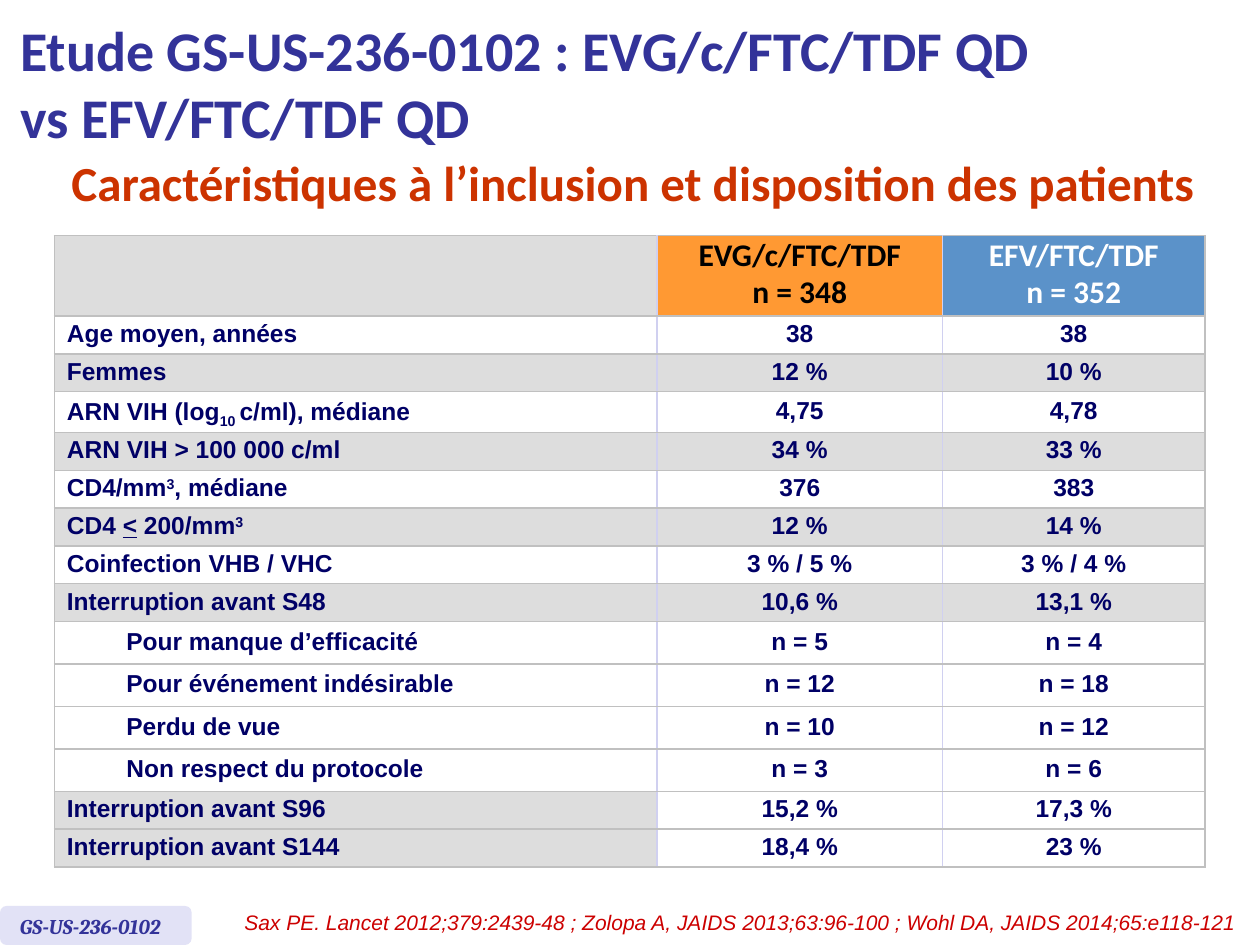
import pptx
import pptx.util
import pptx.dml.color
import pptx.enum.shapes
import pptx.enum.text
import pptx.oxml.ns
import lxml.etree

Pt = pptx.util.Pt
ALIGN = pptx.enum.text.PP_ALIGN
ANCHOR = pptx.enum.text.MSO_ANCHOR
FIT = pptx.enum.text.MSO_AUTO_SIZE
SHAPE = pptx.enum.shapes.MSO_SHAPE

NAVY, BLUE, WHITE, GREY = "000066", "333399", "FFFFFF", "DDDDDD"
LINE, LILAC = "C0C0C0", "D0D0F0"
EDGES = [LINE, None, LILAC, LILAC, LINE]  # vertical rules, left to right
COLS = [34, 310.4, 163.2, 150]
HEAD = [("EVG/c/FTC/TDF\nn = 348", "000000", "FF9933"),
        ("EFV/FTC/TDF\nn = 352", WHITE, "5B92C9")]
SUP, SUB = {"base": 30}, {"base": -25}

# Label, the two values, fill of the label, fill of the values, indented
ROWS = [
    ("Age moyen, années", "38", "38", WHITE, WHITE, False),
    ("Femmes", "12 %", "10 %", GREY, GREY, False),
    (["ARN VIH (log", ("10 ", SUB), "c/ml), médiane"],
     "4,75", "4,78", WHITE, WHITE, False),
    ("ARN VIH > 100 000 c/ml", "34 %", "33 %", GREY, GREY, False),
    (["CD4/mm", ("3", SUP), ", médiane"], "376", "383", WHITE, WHITE, False),
    (["CD4 ", ("<", {"under": True}), " 200/mm", ("3", SUP)],
     "12 %", "14 %", GREY, GREY, False),
    ("Coinfection VHB / VHC", "3 % / 5 %", "3 % / 4 %", WHITE, WHITE, False),
    ("Interruption avant S48", "10,6 %", "13,1 %", GREY, GREY, False),
    ("Pour manque d’efficacité", "n = 5", "n = 4", WHITE, WHITE, True),
    ("Pour événement indésirable", "n = 12", "n = 18", WHITE, WHITE, True),
    ("Perdu de vue", "n = 10", "n = 12", WHITE, WHITE, True),
    ("Non respect du protocole", "n = 3", "n = 6", WHITE, WHITE, True),
    ("Interruption avant S96", "15,2 %", "17,3 %", GREY, WHITE, False),
    ("Interruption avant S144", "18,4 %", "23 %", GREY, WHITE, False),
]


def tint(code):
    return pptx.dml.color.RGBColor.from_string(code)


def node(top, tag, **attrs):
    return lxml.etree.SubElement(top, pptx.oxml.ns.qn(tag), **attrs)


def add_run(para, text, size, face, color, bold, slant, base=0, under=False):
    run = para.add_run()
    run.text = text
    font = run.font
    font.size, font.name = Pt(size), face
    font.bold, font.italic = bold, slant
    font.color.rgb = tint(color)
    if under:
        font.underline = True
    if base:
        run._r.get_or_add_rPr().set("baseline", str(base * 1000))


def write(frame, text, size=14, face="Arial", color=NAVY, bold=False,
          slant=False, align=ALIGN.LEFT, space=None, gap=0):
    """Fill a frame; text is lines in a string, or a list of run parts."""
    lines = [[line] for line in text.split("\n")] if isinstance(text, str) else [text]
    for i, parts in enumerate(lines):
        para = frame.add_paragraph() if i else frame.paragraphs[0]
        para.alignment = align
        if space:
            para.line_spacing = space
        if i and gap:
            para.space_before = Pt(gap)
        for part in parts:
            words, extra = (part, {}) if isinstance(part, str) else part
            add_run(para, words, size, face, color, bold, slant, **extra)


def text_box(shapes, left, top, width, height, text, **form):
    box = shapes.add_textbox(Pt(left), Pt(top), Pt(width), Pt(height))
    box.text_frame.word_wrap = True
    box.text_frame.auto_size = FIT.SHAPE_TO_FIT_TEXT
    write(box.text_frame, text, **form)


def dress(cell, fill, left, right):
    """Set the borders, then the fill, of one cell."""
    props = cell._tc.get_or_add_tcPr()
    for side, color in zip("LRTB", (left, right, LINE, LINE)):
        edge = node(props, f"a:ln{side}", w=str(Pt(1)))
        if color:
            node(node(edge, "a:solidFill"), "a:srgbClr", val=color)
        else:
            node(edge, "a:noFill")
    cell.fill.solid()
    cell.fill.fore_color.rgb = tint(fill)
    cell.vertical_anchor = ANCHOR.MIDDLE


def add_grid(slide):
    high = [46] + [23 if row[5] else 21.6 for row in ROWS]
    grid = slide.shapes.add_table(len(high), len(COLS), Pt(31), Pt(134.6),
                                  Pt(sum(COLS)), Pt(sum(high))).table
    grid.first_row = grid.horz_banding = False
    for col, width in zip(grid.columns, COLS):
        col.width = Pt(width)
    for row, height in zip(grid.rows, high):
        row.height = Pt(height)

    # Fills and rules; the label spans two columns unless indented
    looks = [[GREY, GREY] + [fill for _, _, fill in HEAD]]
    looks += [[row[3]] * 2 + [row[4]] * 2 for row in ROWS]
    for r, fills in enumerate(looks):
        span = r == 0 or not ROWS[r - 1][5]
        for c, fill in enumerate(fills):
            right = LILAC if span and c == 0 else EDGES[c + 1]
            dress(grid.cell(r, c), fill, EDGES[c], right)
        blanks = [0] if not span else [1]
        for c in blanks:
            para = grid.cell(r, c).text_frame.paragraphs[0]
            node(para._p, "a:endParaRPr", sz="1400")
        if span:
            grid.cell(r, 0).merge(grid.cell(r, 1))

    # Column heads
    for c, (text, color, _) in enumerate(HEAD, 2):
        write(grid.cell(0, c).text_frame, text, size=18, face="Calibri",
              color=color, bold=True, align=ALIGN.CENTER, space=0.8, gap=3.6)

    # Labels and values
    for r, (label, first, second, _, _, inset) in enumerate(ROWS, 1):
        write(grid.cell(r, int(inset)).text_frame, label, bold=True, space=0.9)
        for c, value in enumerate((first, second), 2):
            write(grid.cell(r, c).text_frame, value, bold=True,
                  align=ALIGN.CENTER, space=0.9)


def add_title(slide):
    title = slide.shapes.title
    title.left, title.top = Pt(4.3), Pt(3.6)
    title.width, title.height = Pt(687.6), Pt(87)
    frame = title.text_frame
    frame.word_wrap = True
    frame.auto_size = FIT.NONE
    frame.vertical_anchor = ANCHOR.MIDDLE
    write(frame, "Etude GS-US-236-0102 : EVG/c/FTC/TDF QD\nvs EFV/FTC/TDF QD",
          size=32, face="Calibri", color=BLUE, bold=True)


def add_tag(slide):
    group = slide.shapes.add_group_shape()
    plate = group.shapes.add_shape(SHAPE.ROUNDED_RECTANGLE, Pt(0), Pt(517.7),
                                   Pt(109.5), Pt(22.3))
    plate.shadow.inherit = False
    plate.fill.solid()
    plate.fill.fore_color.rgb = tint("E2E2F6")
    plate.line.fill.background()
    text_box(group.shapes, 4.3, 518.4, 101.5, 21.6, "GS-US-236-0102",
             size=12, face="Cambria", color=BLUE, bold=True, slant=True)


def main():
    deck = pptx.Presentation()
    deck.slide_width, deck.slide_height = Pt(720), Pt(540)
    slide = deck.slides.add_slide(deck.slide_layouts[5])
    add_title(slide)
    add_grid(slide)
    # Subtitle
    text_box(slide.shapes, 31, 102.2, 661, 22.3,
             "Caractéristiques à l’inclusion et disposition des patients",
             size=28, face="Calibri", color="CC3300", bold=True,
             align=ALIGN.CENTER, space=Pt(15.2))
    # Sources
    text_box(slide.shapes, 109.4, 516.2, 607.7, 21.6,
             "Sax PE. Lancet 2012;379:2439-48 ; Zolopa A, JAIDS 2013;63:96-100 ; "
             "Wohl DA, JAIDS 2014;65:e118-121 ",
             size=12, color="CC0000", slant=True, align=ALIGN.RIGHT)
    add_tag(slide)
    deck.save("out.pptx")


if __name__ == "__main__":
    main()
